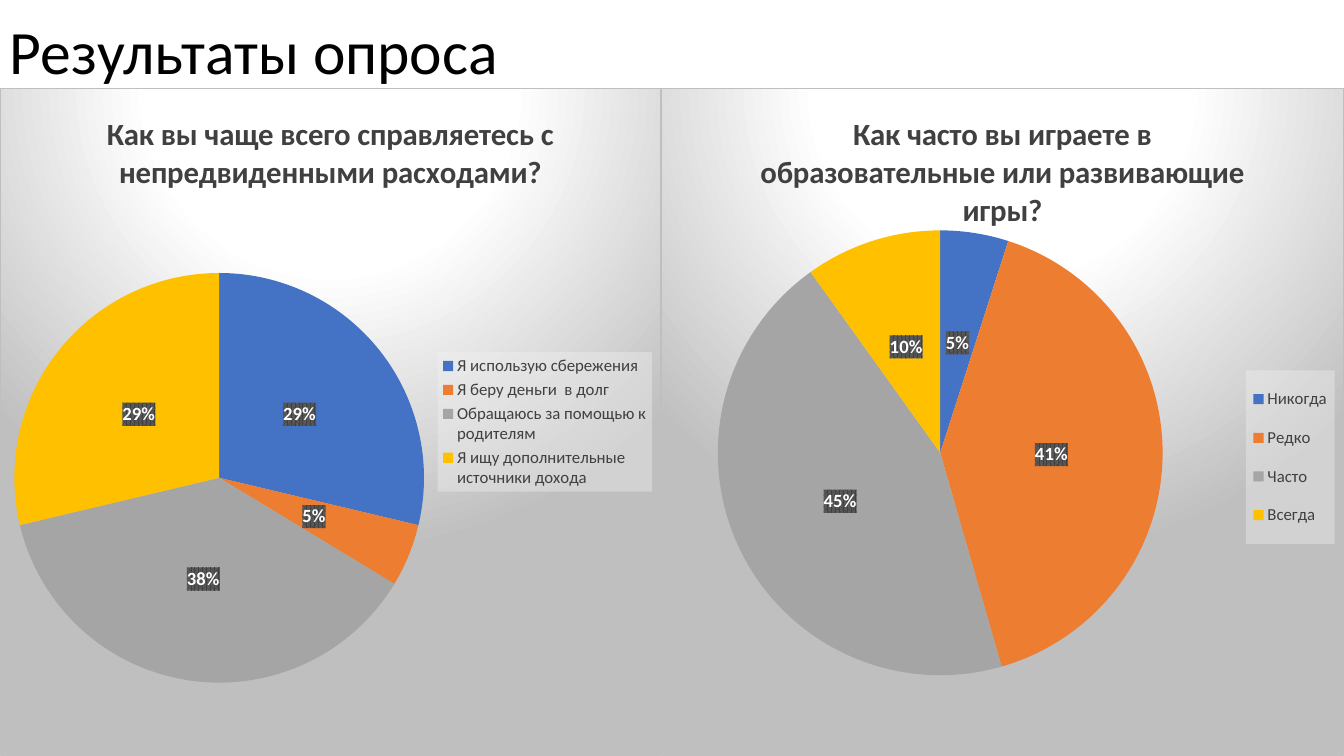
from pptx import Presentation
from pptx.chart.data import CategoryChartData
from pptx.dml.color import RGBColor
from pptx.enum.chart import XL_CHART_TYPE, XL_LABEL_POSITION, XL_LEGEND_POSITION
from pptx.enum.text import MSO_ANCHOR, MSO_AUTO_SIZE, PP_ALIGN
from pptx.oxml import parse_xml
from pptx.oxml.ns import nsdecls, qn
from pptx.util import Cm, Pt

PIE = XL_CHART_TYPE.PIE
CENTER = XL_LABEL_POSITION.CENTER
RIGHT = XL_LEGEND_POSITION.RIGHT
LEFT_ALIGN = PP_ALIGN.LEFT
TOP = MSO_ANCHOR.TOP
NO_FIT = MSO_AUTO_SIZE.NONE

SLIDE_W, SLIDE_H = 33.87, 19.05
CHART_TOP, SPLIT = 2.21, 16.65
FONT = "Calibri"
DARK = "404040"
SLICES = ["4472C4", "ED7D31", "A5A5A5", "FFC000"]

CHART_FILL = """<a:gradFill><a:gsLst>
<a:gs pos="0"><a:srgbClr val="FFFFFF"/></a:gs>
<a:gs pos="39000"><a:srgbClr val="FFFFFF"/></a:gs>
<a:gs pos="100000"><a:srgbClr val="BFBFBF"/></a:gs></a:gsLst>
<a:path path="circle"><a:fillToRect l="50000" t="-80000" r="50000" b="180000"/></a:path>
</a:gradFill><a:ln w="9525"><a:solidFill><a:srgbClr val="BFBFBF"/></a:solidFill></a:ln>"""
LEGEND_FILL = """<a:solidFill><a:srgbClr val="F2F2F2"><a:alpha val="39000"/></a:srgbClr>
</a:solidFill><a:ln><a:noFill/></a:ln>"""
LABEL_FILL = """<a:pattFill prst="pct75"><a:fgClr><a:srgbClr val="404040"/></a:fgClr>
<a:bgClr><a:srgbClr val="595959"/></a:bgClr></a:pattFill><a:ln><a:noFill/></a:ln>"""


def rgb(value):
    return RGBColor.from_string(value)


def style_font(font, size, color, bold=False):
    font.name, font.size, font.bold = FONT, Pt(size), bold
    font.color.rgb = rgb(color)


def write_text(tf, text, size, color, bold=False, align=None):
    p = tf.paragraphs[0]
    p.alignment = align
    r = p.add_run()
    r.text = text
    style_font(r.font, size, color, bold)
    return p


def shape_properties(content):
    return parse_xml(f'<c:spPr {nsdecls("c", "a")}>{content}</c:spPr>')


def manual_layout(box, inner=False):
    """Layout element for x, y, w, h given in percent of the chart."""
    target = '<c:layoutTarget val="inner"/>' if inner else ""
    modes = '<c:xMode val="edge"/><c:yMode val="edge"/>'
    sizes = "".join(f'<c:{n} val="{v / 100:.3f}"/>' for n, v in zip("xywh", box))
    return parse_xml(f'<c:layout {nsdecls("c")}><c:manualLayout>'
                     f'{target}{modes}{sizes}</c:manualLayout></c:layout>')


def drop_layout(element):
    for layout in element.findall(qn("c:layout")):
        element.remove(layout)


def add_legend(chart, box):
    chart.has_legend = True
    legend = chart.legend
    legend.position = RIGHT
    legend.include_in_layout = False
    style_font(legend.font, 12, DARK)
    overlay = legend._element.find(qn("c:overlay"))
    overlay.addnext(shape_properties(LEGEND_FILL))
    if box:
        drop_layout(legend._element)
        overlay.addprevious(manual_layout(box))


def add_percent_labels(plot):
    plot.has_data_labels = True
    labels = plot.data_labels
    labels.show_percentage = True
    labels.show_value = False
    labels.number_format = "0%"
    labels.number_format_is_linked = False
    labels.position = CENTER
    style_font(labels.font, 13.3, "FFFFFF", bold=True)
    labels._element.find(qn("c:txPr")).addprevious(shape_properties(LABEL_FILL))


def add_pie(slide, left, width, question, answers, plot_box, legend_box=None):
    data = CategoryChartData()
    data.categories = list(answers)
    data.add_series(question, list(answers.values()))
    chart = slide.shapes.add_chart(PIE, Cm(left), Cm(CHART_TOP), Cm(width),
                                   Cm(SLIDE_H - CHART_TOP), data).chart
    style_font(chart.font, 10, "000000")
    chart.has_title = True
    write_text(chart.chart_title.text_frame, question, 22, DARK, bold=True)
    chart.chart_title.include_in_layout = False

    plot = chart.plots[0]
    plot.vary_by_categories = True
    for i, color in enumerate(SLICES):
        fill = plot.series[0].points[i].format.fill
        fill.solid()
        fill.fore_color.rgb = rgb(color)
    add_percent_labels(plot)
    add_legend(chart, legend_box)

    chart_element = chart._chartSpace.find(qn("c:chart"))
    chart_element.addnext(shape_properties(CHART_FILL))
    plot_area = chart_element.find(qn("c:plotArea"))
    drop_layout(plot_area)
    plot_area.insert(0, manual_layout(plot_box, inner=True))


def add_title(slide, text):
    sp = slide.shapes.title
    sp.left, sp.top, sp.width, sp.height = Cm(0), Cm(0.2), Cm(16.4), Cm(2.9)
    tf = sp.text_frame
    tf.auto_size = NO_FIT
    tf.vertical_anchor = TOP
    tf.margin_left, tf.margin_top = Cm(0.25), Cm(0.13)
    p = write_text(tf, text, 44, "000000", align=LEFT_ALIGN)
    p.line_spacing = 1.0


def main():
    prs = Presentation()
    prs.slide_width, prs.slide_height = Cm(SLIDE_W), Cm(SLIDE_H)
    slide = prs.slides.add_slide(prs.slide_layouts[5])
    add_title(slide, "Результаты опроса")
    add_pie(slide, SPLIT, SLIDE_W - SPLIT,
            "Как часто вы играете в образовательные или развивающие игры?",
            {"Никогда": 5, "Редко": 41, "Часто ": 45, "Всегда": 10},
            plot_box=(8.3, 20.6, 65.2, 68.1),
            legend_box=(85.7, 42.3, 13, 26))
    add_pie(slide, 0, SPLIT,
            "Как вы чаще всего справляетесь с непредвиденными расходами?",
            {"Я использую сбережения": 29,
             "Я беру деньги  в долг": 5,
             "Обращаюсь за помощью к родителям": 38,
             "Я ищу дополнительные источники дохода": 29},
            plot_box=(2.1, 27.7, 62.1, 61.4))
    prs.save("out.pptx")


if __name__ == "__main__":
    main()
